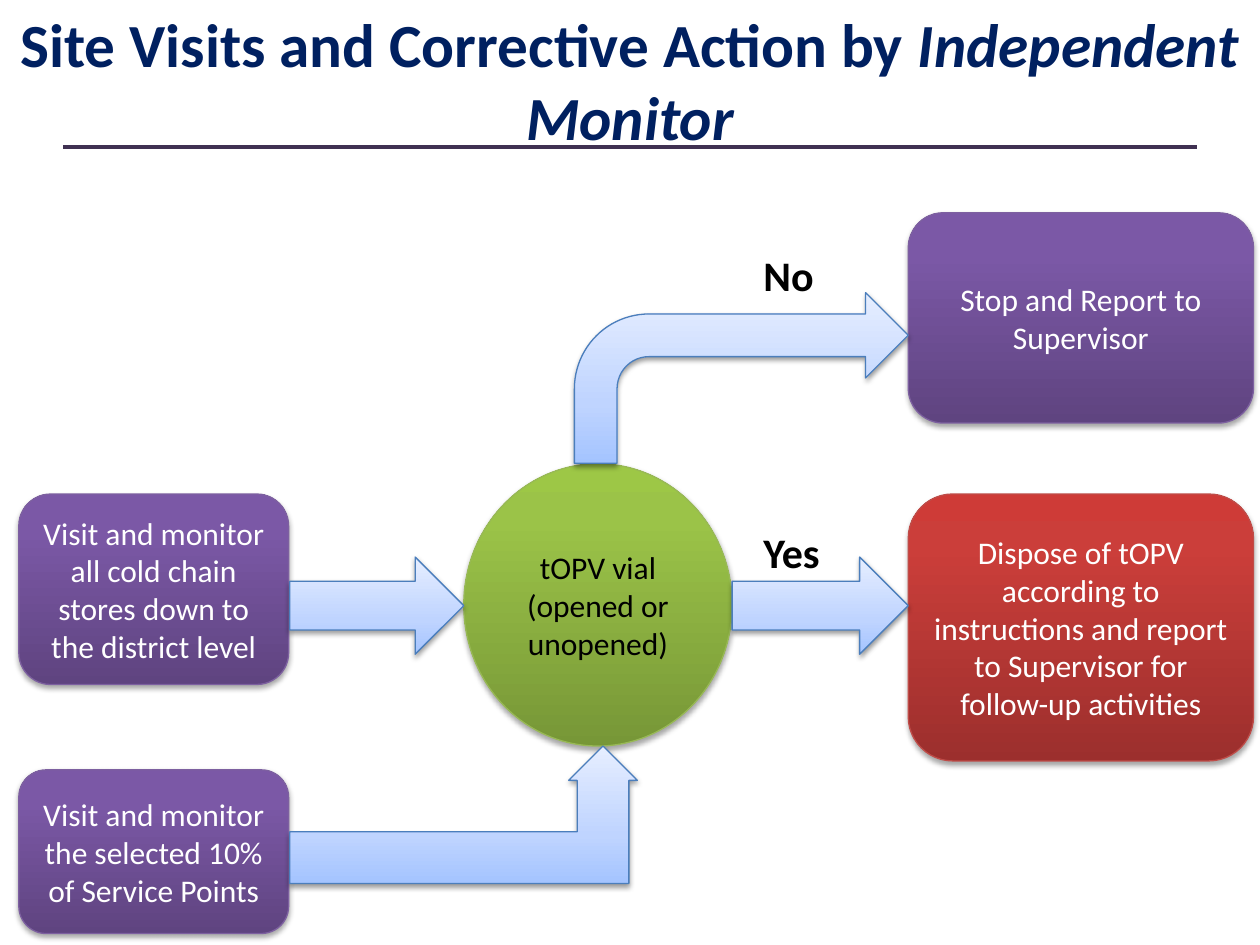
from copy import deepcopy
from dataclasses import dataclass

from lxml import etree
from pptx import Presentation
from pptx.dml.color import RGBColor
from pptx.enum.shapes import MSO_CONNECTOR, MSO_SHAPE
from pptx.enum.text import MSO_ANCHOR, MSO_AUTO_SIZE, PP_ALIGN
from pptx.oxml.ns import qn
from pptx.util import Cm, Pt

ROUNDED = MSO_SHAPE.ROUNDED_RECTANGLE
OVAL = MSO_SHAPE.OVAL
RIGHT_ARROW = MSO_SHAPE.RIGHT_ARROW
BENT_ARROW = MSO_SHAPE.BENT_ARROW
BENT_UP_ARROW = MSO_SHAPE.BENT_UP_ARROW
CENTER = PP_ALIGN.CENTER
MIDDLE = MSO_ANCHOR.MIDDLE
FIT_SHAPE = MSO_AUTO_SIZE.SHAPE_TO_FIT_TEXT
STRAIGHT = MSO_CONNECTOR.STRAIGHT


@dataclass(frozen=True)
class Finish:
    """Gradient stops run from the bottom up as (percent, colour)."""
    stops: tuple
    outline: str
    text: str = "FFFFFF"
    shadow_alpha: int = 35
    shadow_distance: float = 1.8


@dataclass(frozen=True)
class Theme:
    font: str = "Calibri"
    title_size: int = 35
    label_size: int = 24
    body_size: int = 18
    title: str = "002060"
    label: str = "000000"
    rule: str = "403152"
    shadow: str = "000000"
    purple: Finish = Finish(((0, "5F4480"), (80, "7B58A6"), (100, "7C57A8")), "7D60A0")
    green: Finish = Finish(((0, "779737"), (80, "9BC348"), (100, "9DC746")), "98B955", "000000")
    red: Finish = Finish(((0, "9C2F2D"), (80, "CB3E3A"), (100, "CE3B37")), "BF4C48")
    arrow: Finish = Finish(((0, "A4C4FF"), (35, "BFD4FF"), (100, "E6EEFF")), "4B7EBC",
                           shadow_alpha=38, shadow_distance=1.6)


THEME = Theme()

LEFT_COLUMN, LEFT_WIDTH = 0.38, 5.44
RIGHT_COLUMN, RIGHT_WIDTH = 18.31, 6.96
CIRCLE_LEFT, CIRCLE_TOP, CIRCLE_WIDTH, CIRCLE_HEIGHT = 9.35, 9.35, 5.41, 5.69
ROW_TOP = 9.96
ARROW_LEFT, ARROW_TOP, ARROW_HEIGHT = 5.84, 11.23, 1.96
LABEL_LEFT = 15.14


def style_font(paragraph, size, color, bold=None):
    font = paragraph.font
    font.name = THEME.font
    font.size = Pt(size)
    font.bold = bold
    font.color.rgb = RGBColor.from_string(color)


def apply_gradient(shape, stops):
    shape.fill.gradient()
    shape.fill.gradient_angle = 90
    stop_list = shape._element.spPr.find(".//" + qn("a:gsLst"))
    stop_list.append(deepcopy(stop_list[0]))
    for stop, (percent, color) in zip(shape.fill.gradient_stops, stops):
        stop.position = percent / 100
        stop.color.rgb = RGBColor.from_string(color)


def apply_shadow(shape, finish):
    shape.shadow.inherit = False
    effects = shape._element.spPr.find(qn("a:effectLst"))
    shadow = etree.SubElement(effects, qn("a:outerShdw"), blurRad=str(Pt(3.1)),
                              dist=str(Pt(finish.shadow_distance)),
                              dir="5400000", rotWithShape="0")
    color = etree.SubElement(shadow, qn("a:srgbClr"), val=THEME.shadow)
    etree.SubElement(color, qn("a:alpha"), val=str(finish.shadow_alpha * 1000))


def add_glossy_shape(slide, kind, box, finish):
    shape = slide.shapes.add_shape(kind, *map(Cm, box))
    apply_gradient(shape, finish.stops)
    shape.line.color.rgb = RGBColor.from_string(finish.outline)
    shape.line.width = Pt(0.75)
    apply_shadow(shape, finish)
    return shape


def add_step(slide, kind, box, finish, text):
    frame = add_glossy_shape(slide, kind, box, finish).text_frame
    frame.word_wrap = True
    frame.vertical_anchor = MIDDLE
    paragraph = frame.paragraphs[0]
    paragraph.text = text
    paragraph.alignment = CENTER
    style_font(paragraph, THEME.body_size, finish.text)


def add_arrow(slide, kind, box, adjustments=()):
    arrow = add_glossy_shape(slide, kind, box, THEME.arrow)
    for index, value in enumerate(adjustments):
        arrow.adjustments[index] = value


def add_label(slide, top, width, text):
    frame = slide.shapes.add_textbox(Cm(LABEL_LEFT), Cm(top), Cm(width), Cm(1.27)).text_frame
    frame.word_wrap = False
    frame.auto_size = FIT_SHAPE
    paragraph = frame.paragraphs[0]
    paragraph.text = text
    style_font(paragraph, THEME.label_size, THEME.label, bold=True)


def add_title(slide, plain, emphasis):
    frame = slide.shapes.add_textbox(0, 0, Cm(25.4), Cm(3.25)).text_frame
    frame.word_wrap = True
    frame.auto_size = FIT_SHAPE
    paragraph = frame.paragraphs[0]
    paragraph.alignment = CENTER
    style_font(paragraph, THEME.title_size, THEME.title, bold=True)
    paragraph.add_run().text = plain
    run = paragraph.add_run()
    run.text = emphasis
    run.font.italic = True


def add_title_rule(slide):
    rule = slide.shapes.add_connector(STRAIGHT, Cm(1.27), Cm(2.97), Cm(24.13), Cm(2.97))
    rule.line.color.rgb = RGBColor.from_string(THEME.rule)
    rule.line.width = Pt(2.25)
    etree.SubElement(rule._element.spPr, qn("a:effectLst"))


def main():
    presentation = Presentation()
    presentation.slide_width = Cm(25.4)
    presentation.slide_height = Cm(19.05)
    slide = presentation.slides.add_slide(presentation.slide_layouts[6])

    add_title_rule(slide)

    circle_right = CIRCLE_LEFT + CIRCLE_WIDTH
    circle_bottom = CIRCLE_TOP + CIRCLE_HEIGHT
    steps = [
        (ROUNDED, (LEFT_COLUMN, ROW_TOP, LEFT_WIDTH, 3.84), THEME.purple,
         "Visit and monitor all cold chain stores down to the district level"),
        (ROUNDED, (LEFT_COLUMN, 15.52, LEFT_WIDTH, 3.3), THEME.purple,
         "Visit and monitor the selected 10% of Service Points"),
        (OVAL, (CIRCLE_LEFT, CIRCLE_TOP, CIRCLE_WIDTH, CIRCLE_HEIGHT), THEME.green,
         "tOPV vial (opened or unopened)"),
        (ROUNDED, (RIGHT_COLUMN, 4.29, RIGHT_WIDTH, 4.24), THEME.purple,
         "Stop and Report to Supervisor"),
        (ROUNDED, (RIGHT_COLUMN, ROW_TOP, RIGHT_WIDTH, 5.38), THEME.red,
         "Dispose of tOPV according to instructions and report to Supervisor "
         "for follow-up activities"),
    ]
    for step in steps:
        add_step(slide, *step)

    add_arrow(slide, BENT_UP_ARROW, (ARROW_LEFT, circle_bottom, 7.01, 2.77), (0.376, 0.25, 0.25))
    add_arrow(slide, BENT_ARROW, (11.58, 5.9, RIGHT_COLUMN - 11.58, 3.44))
    for start, end in ((ARROW_LEFT, CIRCLE_LEFT), (circle_right, RIGHT_COLUMN)):
        add_arrow(slide, RIGHT_ARROW, (start, ARROW_TOP, end - start, ARROW_HEIGHT))

    add_label(slide, 4.9, 1.52, "No")
    add_label(slide, 10.49, 1.73, "Yes")
    add_title(slide, "Site Visits and Corrective Action by ", "Independent Monitor")

    presentation.save("out.pptx")


if __name__ == "__main__":
    main()
